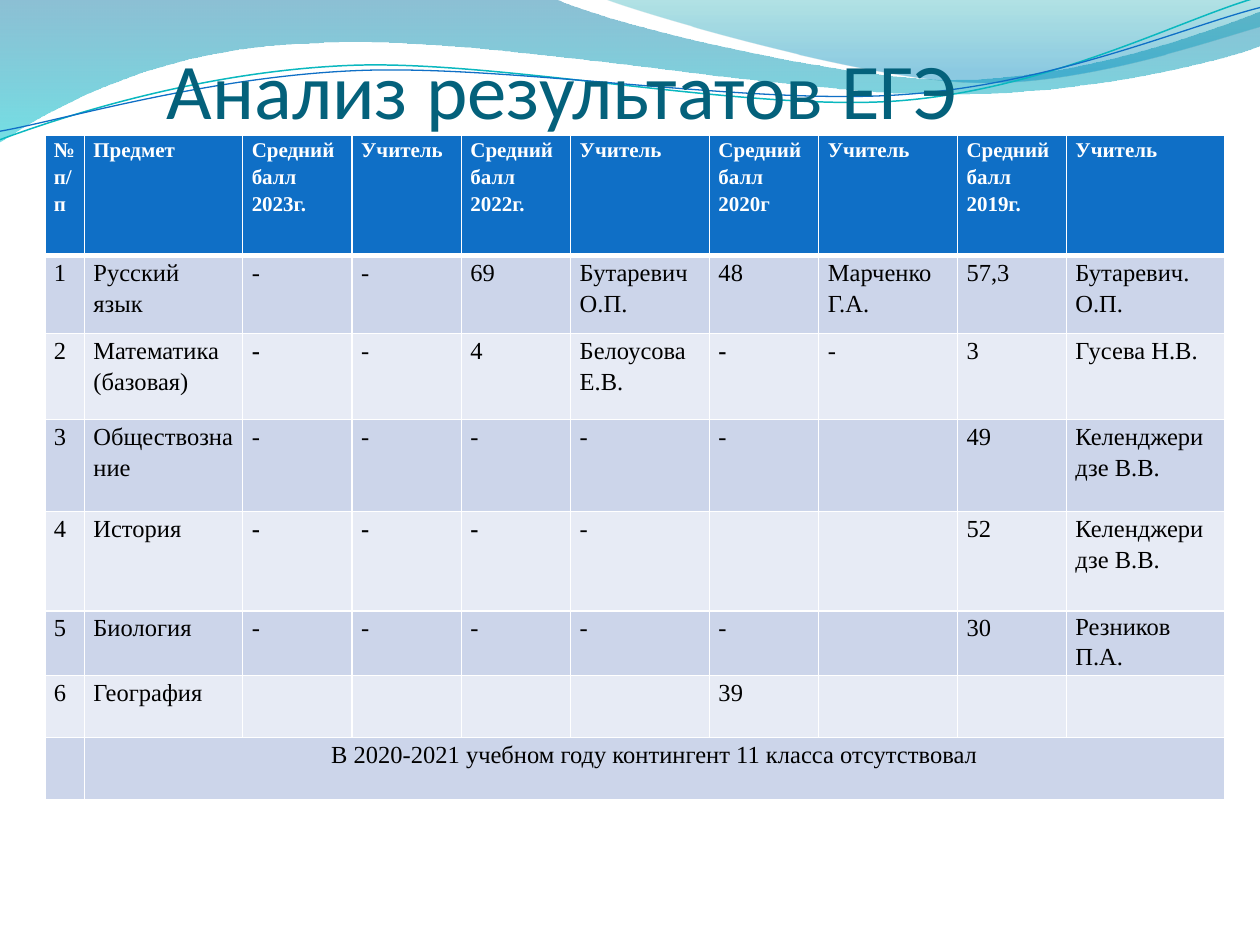
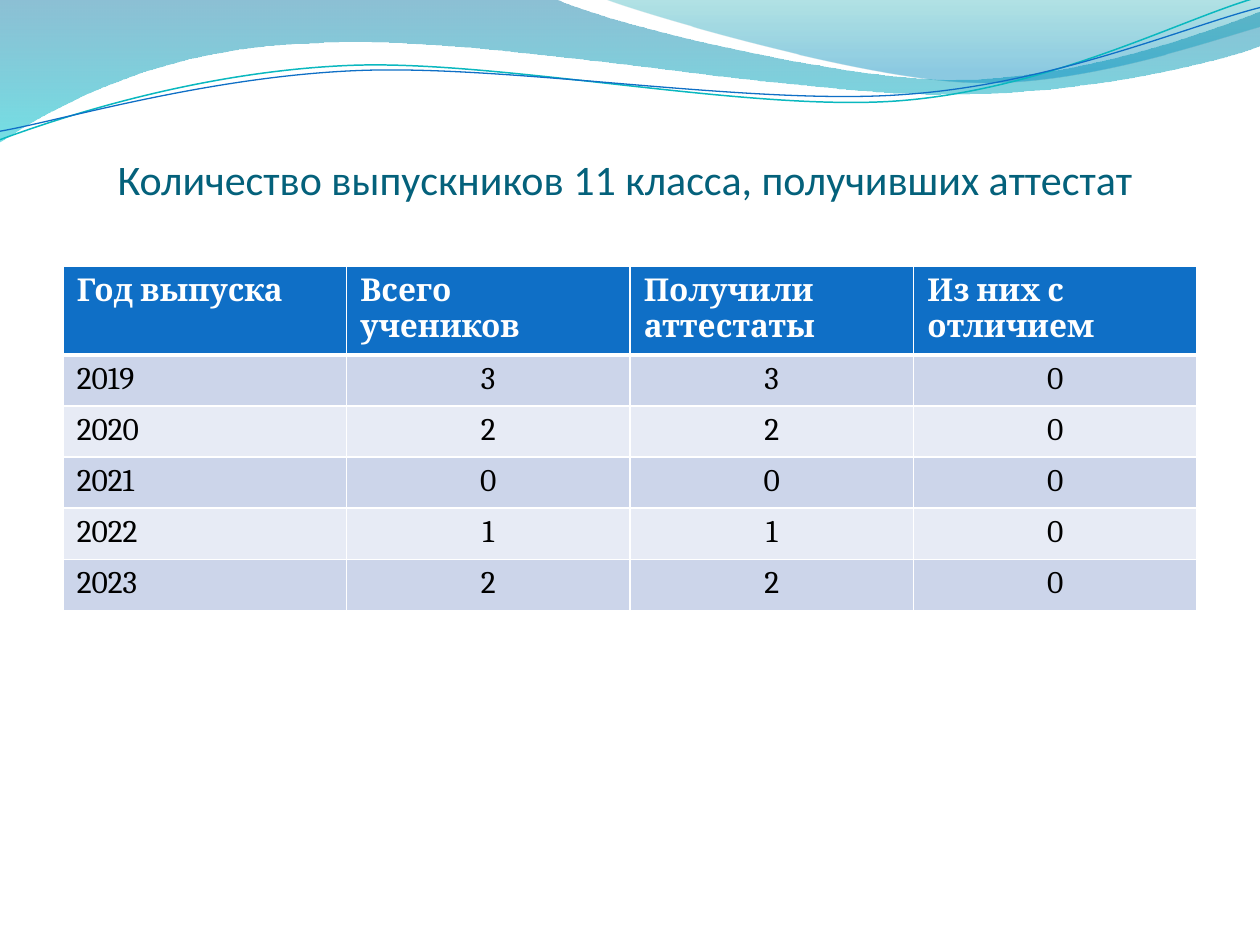
from lxml import etree
from pptx import Presentation
from pptx.dml.color import RGBColor
from pptx.enum.text import MSO_ANCHOR, PP_ALIGN
from pptx.oxml.ns import qn
from pptx.util import Pt

CENTER, LEFT = PP_ALIGN.CENTER, PP_ALIGN.LEFT
BOTTOM = MSO_ANCHOR.BOTTOM
LINE_ROTATION = 357.3
HEADER_BORDERS = {"lnL": 1, "lnR": 1, "lnT": 1, "lnB": 3}

COLORS = {
    "title": "04617B", "header": "0F6FC6", "header_text": "FFFFFF",
    "band_dark": "CCD5EA", "band_light": "E7EBF5", "text": "000000",
    "border": "FFFFFF", "deep_blue": "0074A1", "aqua": "00C6CF",
    "teal": "00A1A9", "sky": "008BBF",
    "teal_line": "0AB8BF", "blue_line": "0F6FC6",
}

# Each segment has two numbers for a line or six for a Bezier curve.
# Gradient stops are (position, color, opacity in percent).
WAVES = [
    {"segments": [(0, 0), (317, -0.7),
                  (342.7, 12.2, 478, 45.4, 545.8, 45.4),
                  (614.2, 45.4, 689.8, 18.7, 720, 6.5), (720.7, 25.9),
                  (707.8, 31.7, 626.4, 54.7, 537.1, 54),
                  (447.8, 54, 275, 20.2, 185, 24.5),
                  (92.9, 25.9, 33.1, 59.8, -0.7, 81.4), (0, 0)],
     "stops": [(0, "deep_blue", 45), (1, "aqua", 55)]},
    {"segments": [(344.9, -0.7),
                  (366.5, 7.9, 491, 44.6, 553.7, 46.8),
                  (616.3, 49.7, 691.9, 23, 720, 15.1), (720, 0),
                  (344.9, -0.7)],
     "stops": [(0, "teal", 30), (0.8, "sky", 45)]},
    {"segments": [(-1.4, 62.9),
                  (33.8, 51.7, 114.1, 29.4, 199.8, 29.9),
                  (284.9, 30.3, 425.8, 67.3, 512.4, 64.9),
                  (599, 62.4, 676.4, 25.7, 720.2, 15.5)],
     "line": ("teal_line", 0.85)},
    {"segments": [(-1.1, 58),
                  (32.9, 53.8, 118.3, 32.5, 204.1, 33),
                  (290.6, 33.4, 428.9, 63.8, 515.5, 61.4),
                  (601.3, 59.6, 678.4, 30.1, 721.4, 21.3)],
     "line": ("blue_line", 0.75)},
]

# Exam results: one row per subject
score_headers = ["№\nп/п", "Предмет"]
for year in ("2023г.", "2022г.", "2020г", "2019г."):
    score_headers += [f"Средний балл\n{year}", "Учитель"]
score_rows = [
    score_headers,
    ["1", "Русский язык", "-", "-", "69", "Бутаревич О.П.", "48",
     "Марченко Г.А.", "57,3", "Бутаревич. О.П."],
    ["2", "Математика (базовая)", "-", "-", "4", "Белоусова Е.В.", "-", "-",
     "3", "Гусева Н.В."],
    ["3", "Обществознание", "-", "-", "-", "-", "-", "", "49",
     "Келенджеридзе В.В."],
    ["4", "История", "-", "-", "-", "-", "", "", "52", "Келенджеридзе В.В."],
    ["5", "Биология", "-", "-", "-", "-", "-", "", "30", "Резников П.А."],
    ["6", "География", "", "", "", "", "39", "", "", ""],
    ["", "В 2020-2021 учебном году контингент 11 класса отсутствовал"],
]

# Graduates: one row per year
graduate_rows = [
    ["Год выпуска", "Всего учеников", "Получили аттестаты",
     "Из них с отличием"],
    ["2019", "3", "3", "0"],
    ["2020", "2", "2", "0"],
    ["2021", "0", "0", "0"],
    ["2022", "1", "1", "0"],
    ["2023", "2", "2", "0"],
]

PAGES = [
    {"title": "Анализ результатов ЕГЭ", "title_size": 45,
     "title_box": (36, 25.9, 570.2, 51.1), "title_insets": (0, 0),
     "rows": score_rows, "left": 25.6, "top": 77.3,
     "widths": [22.6, 90.5, 62.5, 62.5, 62.5, 79.3, 62.5, 79.3, 62.2, 90.4],
     "heights": [68.8, 44.6, 49, 52.6, 56.9, 35.4, 35.4, 35.4],
     "font": "Times New Roman", "header_size": 12, "body_size": 14,
     "margins": (5.2, 0), "spacing": 1.15, "number_align": LEFT,
     "bold": {(2, 2), (2, 6), (4, 2), (4, 3), (4, 4)}, "tight": {(5, 9)}},
    {"title": "Количество выпускников 11 класса, получивших аттестат",
     "title_size": 24,
     "title_box": (36, 55.4, 648, 90), "title_insets": (5.7, 29),
     "rows": graduate_rows, "left": 36, "top": 152.4,
     "widths": [162] * 4, "heights": [29.2] * 6,
     "font": "Cambria", "header_size": 18, "body_size": 18,
     "margins": (7.9, 3.6), "spacing": 1, "number_align": CENTER,
     "bold": set(), "tight": set()},
]


def rgb(name):
    return RGBColor.from_string(COLORS[name])


def draw_wave(slide, wave):
    # Lay out every node and control point, then join threes into curves
    start, *segments = wave["segments"]
    points = [(Pt(segment[i]), Pt(segment[i + 1]))
              for segment in segments for i in range(0, len(segment), 2)]
    builder = slide.shapes.build_freeform(Pt(start[0]), Pt(start[1]))
    builder.add_line_segments(points, close="stops" in wave)
    shape = builder.convert_to_shape()
    line_nodes = iter(list(shape.element.iter(qn("a:lnTo"))))
    for segment in segments:
        node = next(line_nodes)
        if len(segment) == 6:
            curve = etree.Element(qn("a:cubicBezTo"))
            node.addprevious(curve)
            for control in (node, next(line_nodes), next(line_nodes)):
                curve.append(control[0])
                control.getparent().remove(control)

    shape.shadow.inherit = False
    if "line" in wave:
        color, width = wave["line"]
        shape.rotation = LINE_ROTATION
        shape.fill.background()
        shape.line.color.rgb = rgb(color)
        shape.line.width = Pt(width)
        return
    shape.line.fill.background()
    shape.fill.gradient()
    shape.fill.gradient_angle = 270
    for stop, (position, color, _) in zip(shape.fill.gradient_stops,
                                          wave["stops"]):
        stop.position = position
        stop.color.rgb = rgb(color)
    for element, (_, _, opacity) in zip(shape.element.iter(qn("a:srgbClr")),
                                        wave["stops"]):
        etree.SubElement(element, qn("a:alpha"), val=str(opacity * 1000))


presentation = Presentation()
presentation.slide_width, presentation.slide_height = Pt(720), Pt(540)

for page in PAGES:
    slide = presentation.slides.add_slide(presentation.slide_layouts[6])
    for wave in WAVES:
        draw_wave(slide, wave)

    # Title
    title_box = slide.shapes.add_textbox(*map(Pt, page["title_box"]))
    frame = title_box.text_frame
    frame.word_wrap = True
    frame.vertical_anchor = BOTTOM
    frame.margin_left = 0
    frame.margin_right, frame.margin_bottom = map(Pt, page["title_insets"])
    paragraph = frame.paragraphs[0]
    paragraph.text = page["title"]
    paragraph.alignment = CENTER
    paragraph.font.name = "Calibri"
    paragraph.font.size = Pt(page["title_size"])
    paragraph.font.color.rgb = rgb("title")

    # Table grid
    widths, heights = page["widths"], page["heights"]
    table = slide.shapes.add_table(
        len(heights), len(widths), Pt(page["left"]), Pt(page["top"]),
        Pt(sum(widths)), Pt(sum(heights))).table
    for column, width in zip(table.columns, widths):
        column.width = Pt(width)
    for row, height in zip(table.rows, heights):
        row.height = Pt(height)

    # Table cells; a short row ends in a cell that spans the rest
    side_margin, top_margin = page["margins"]
    for row_index, texts in enumerate(page["rows"]):
        is_header = row_index == 0
        is_short = len(texts) < len(widths)
        if is_short:
            table.cell(row_index, len(texts) - 1).merge(
                table.cell(row_index, len(widths) - 1))
        band = ("header" if is_header
                else "band_dark" if row_index % 2 else "band_light")
        for column_index, text in enumerate(texts):
            position = (row_index, column_index)
            cell = table.cell(*position)
            cell.margin_left = cell.margin_right = Pt(side_margin)
            cell.margin_top = cell.margin_bottom = Pt(top_margin)
            if is_header:
                properties = cell._tc.get_or_add_tcPr()
                for side, width in HEADER_BORDERS.items():
                    border = etree.SubElement(properties, qn(f"a:{side}"),
                                              w=str(Pt(width)))
                    border_fill = etree.SubElement(border, qn("a:solidFill"))
                    etree.SubElement(border_fill, qn("a:srgbClr"),
                                     val=COLORS["border"])
            cell.fill.solid()
            cell.fill.fore_color.rgb = rgb(band)
            cell.text = text
            for paragraph in cell.text_frame.paragraphs:
                paragraph.line_spacing = (1.1 if position in page["tight"]
                                          else page["spacing"])
                if column_index and not is_header:
                    paragraph.alignment = (CENTER if is_short
                                           else page["number_align"])
                font = paragraph.font
                font.name = page["font"]
                font.size = Pt(page["header_size" if is_header
                                    else "body_size"])
                font.bold = is_header or position in page["bold"]
                font.color.rgb = rgb("header_text" if is_header else "text")

    # The fill of a cell must follow its borders
    for cell in table.iter_cells():
        properties = cell._tc.get_or_add_tcPr()
        for fill in properties.findall(qn("a:solidFill")):
            properties.append(fill)

presentation.save("out.pptx")
